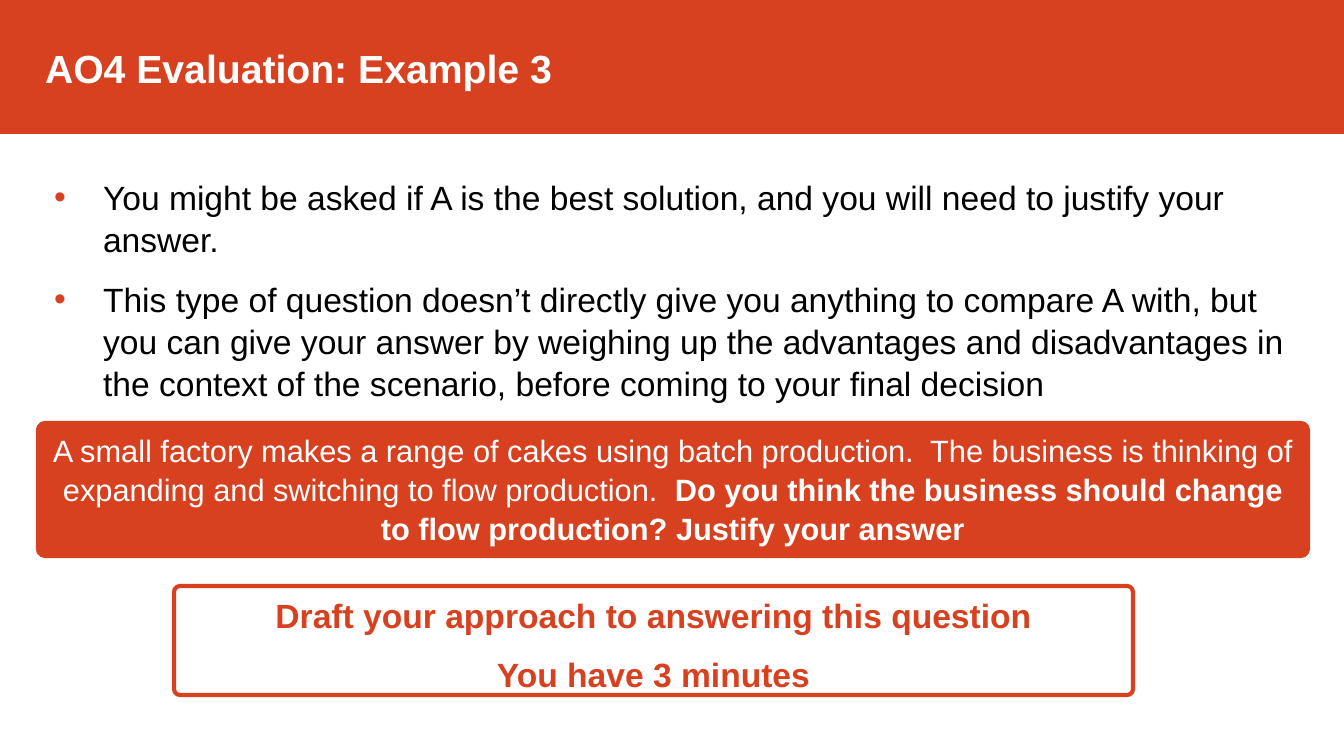
from dataclasses import dataclass
from typing import Optional

from lxml import etree
from pptx import Presentation
from pptx import util as u
from pptx.dml import color
from pptx.enum import shapes, text
from pptx.oxml import ns


@dataclass(frozen=True)
class Theme:
    accent: color.RGBColor = color.RGBColor(0xD7, 0x41, 0x20)
    white: color.RGBColor = color.RGBColor(0xFF, 0xFF, 0xFF)
    ink: color.RGBColor = color.RGBColor(0, 0, 0)
    font: str = "Arial"
    title_pt: int = 28
    body_pt: int = 24
    scenario_pt: int = 22


@dataclass(frozen=True)
class Span:
    words: str
    size: int
    ink: color.RGBColor
    bold: bool = False


@dataclass(frozen=True)
class Panel:
    box: tuple[int, int, int, int]
    fill: Optional[color.RGBColor]
    paragraphs: list[list[Span]]


THEME = Theme()
EMU_PER_PX = 914400 / 100.8
SLIDE_W, SLIDE_H = 1344, 756
BAND_H = 133
INSET = 5
BULLET_INDENT = 49
CORNER = 0.054
LINE_SPACING = 1.05
PARAGRAPH_GAP = 12

POINTS = [
    "You might be asked if A is the best solution, and you will need to justify your answer.",
    "This type of question doesn’t directly give you anything to compare A with, but you can "
    "give your answer by weighing up the advantages and disadvantages in the context of the "
    "scenario, before coming to your final decision",
]
PANELS = [
    Panel((38, 423, 1270, 133), THEME.accent, [[
        Span("A small factory makes a range of cakes using batch production.  The business is "
             "thinking of expanding and switching to flow production.  ",
             THEME.scenario_pt, THEME.white),
        Span("Do you think the business should change to flow production? Justify your answer",
             THEME.scenario_pt, THEME.white, True),
    ]]),
    Panel((174, 586, 959, 109), None, [
        [Span("Draft your approach to answering this question", THEME.body_pt, THEME.accent, True)],
        [Span("You have 3 minutes", THEME.body_pt, THEME.accent, True)],
    ]),
]


def px(length: int) -> u.Emu:
    return u.Emu(round(length * EMU_PER_PX))


def place(shape, box: tuple[int, int, int, int]) -> None:
    shape.left, shape.top, shape.width, shape.height = map(px, box)


def write(frame, paragraphs: list[list[Span]], align, anchor=text.MSO_ANCHOR.TOP) -> None:
    frame.word_wrap = True
    frame.auto_size = text.MSO_AUTO_SIZE.NONE
    frame.vertical_anchor = anchor
    frame.margin_left = frame.margin_right = px(INSET)
    frame.margin_top = frame.margin_bottom = px(INSET)
    for index, spans in enumerate(paragraphs):
        paragraph = frame.add_paragraph() if index else frame.paragraphs[0]
        paragraph.alignment = align
        paragraph.line_spacing = LINE_SPACING
        paragraph.space_before = u.Pt(PARAGRAPH_GAP if index else 0)
        for span in spans:
            run = paragraph.add_run()
            run.text = span.words
            run.font.name = THEME.font
            run.font.size = u.Pt(span.size)
            run.font.bold = span.bold
            run.font.color.rgb = span.ink


def add_bullet(paragraph) -> None:
    properties = paragraph._p.get_or_add_pPr()
    properties.set("marL", str(px(BULLET_INDENT)))
    properties.set("indent", str(-px(BULLET_INDENT)))
    bullet_color = etree.SubElement(properties, ns.qn("a:buClr"))
    etree.SubElement(bullet_color, ns.qn("a:srgbClr"), val=str(THEME.accent))
    etree.SubElement(properties, ns.qn("a:buFont"), typeface=THEME.font)
    etree.SubElement(properties, ns.qn("a:buChar"), char="•")


def add_block(slide, preset, box: tuple[int, int, int, int],
              fill: Optional[color.RGBColor], line_pt: int):
    block = slide.shapes.add_shape(preset, *map(px, box))
    block.shadow.inherit = False
    if fill is None:
        block.fill.background()
    else:
        block.fill.solid()
        block.fill.fore_color.rgb = fill
    block.line.color.rgb = THEME.accent
    block.line.width = u.Pt(line_pt)
    return block


def add_panel(slide, panel: Panel) -> None:
    block = add_block(slide, shapes.MSO_SHAPE.ROUNDED_RECTANGLE, panel.box, panel.fill, 3)
    block.adjustments[0] = CORNER
    write(block.text_frame, panel.paragraphs, text.PP_ALIGN.CENTER)


def main() -> None:
    deck = Presentation()
    deck.slide_width, deck.slide_height = px(SLIDE_W), px(SLIDE_H)
    slide = deck.slides.add_slide(deck.slide_layouts[1])
    title, points = slide.placeholders

    # Title band, sent behind the title
    band = add_block(slide, shapes.MSO_SHAPE.RECTANGLE, (0, 0, SLIDE_W, BAND_H), THEME.accent, 1)
    title._element.addprevious(band._element)
    place(title, (40, 40, SLIDE_W - 40, 54))
    write(title.text_frame,
          [[Span("AO4 Evaluation: Example 3", THEME.title_pt, THEME.white, True)]],
          text.PP_ALIGN.LEFT, text.MSO_ANCHOR.MIDDLE)

    # Bulleted advice
    place(points, (49, 170, 1270, 278))
    write(points.text_frame,
          [[Span(point, THEME.body_pt, THEME.ink)] for point in POINTS],
          text.PP_ALIGN.LEFT)
    for paragraph in points.text_frame.paragraphs:
        add_bullet(paragraph)

    # Scenario and task panels
    for panel in PANELS:
        add_panel(slide, panel)

    deck.save("out.pptx")


if __name__ == "__main__":
    main()
